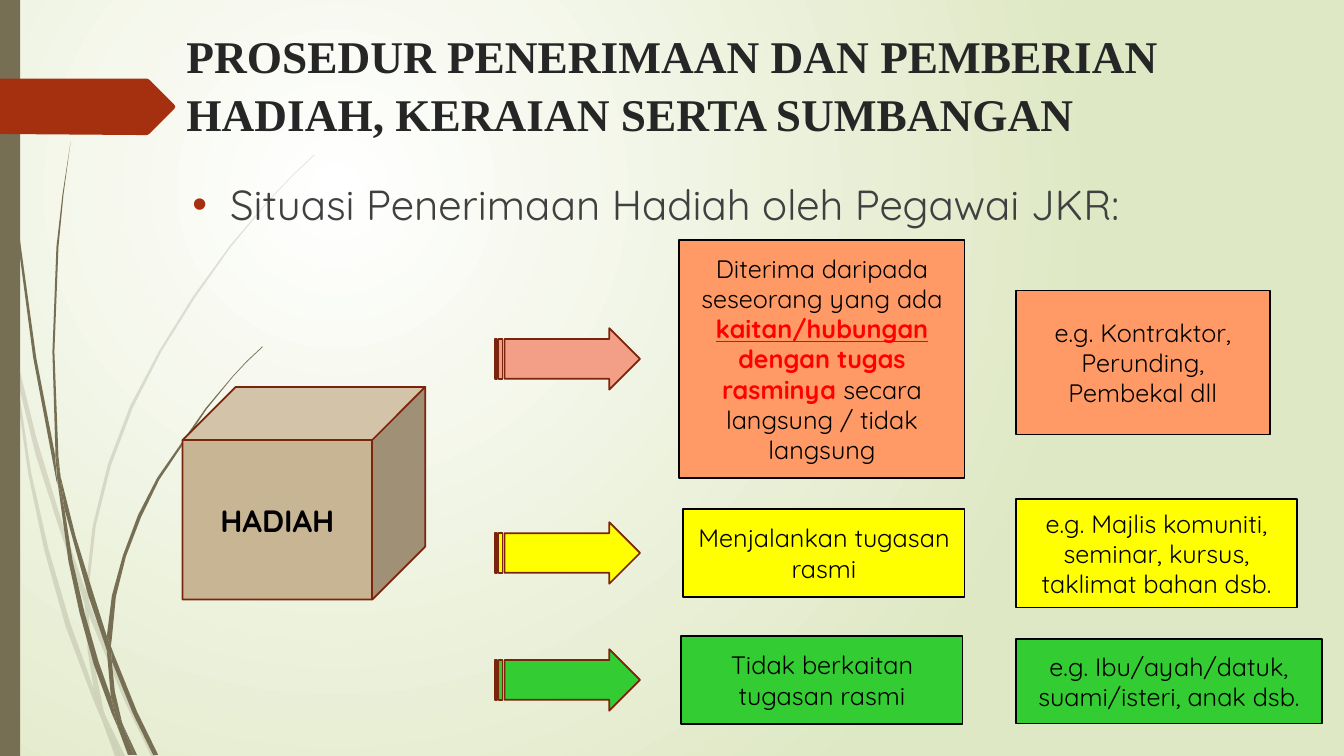
from lxml import etree
from pptx import Presentation
from pptx.dml.color import RGBColor
from pptx.enum.shapes import MSO_SHAPE
from pptx.enum.text import MSO_ANCHOR, PP_ALIGN
from pptx.oxml.ns import qn
from pptx.util import Cm, Pt

RECT = MSO_SHAPE.RECTANGLE
CUBE = MSO_SHAPE.CUBE
ARROW = MSO_SHAPE.STRIPED_RIGHT_ARROW
TOP, MIDDLE = MSO_ANCHOR.TOP, MSO_ANCHOR.MIDDLE
LEFT, CENTER, JUSTIFY = PP_ALIGN.LEFT, PP_ALIGN.CENTER, PP_ALIGN.JUSTIFY

WHITE = RGBColor(0xFF, 0xFF, 0xFF)
BLACK = RGBColor(0, 0, 0)
PALE = RGBColor(0xDF, 0xE8, 0xC4)
OLIVE = RGBColor(0x76, 0x6F, 0x54)
RUST = RGBColor(0xA5, 0x30, 0x10)
BROWN = RGBColor(0x7A, 0x24, 0x0C)
TAN = RGBColor(0xC8, 0xB5, 0x94)
DARK = RGBColor(0x26, 0x26, 0x26)
GREY = RGBColor(0x40, 0x40, 0x40)
RED = RGBColor(0xFF, 0, 0)
SALMON = RGBColor(0xF3, 0x9E, 0x87)
ORANGE = RGBColor(0xFF, 0x99, 0x66)
YELLOW = RGBColor(0xFF, 0xFF, 0)
GREEN = RGBColor(0x33, 0xCC, 0x33)

GRID = Cm(0.0254)  # unit of the outline points below

# Grass blades: faint ones behind, solid ones in front
FAINT = [
    [(11, 350), (9, 322), (0, 282), (0, 299), (10, 344)],
    [(58, 522), (84, 599), (85, 586), (62, 520), (36, 434), (14, 345),
     (17, 376), (35, 450)],
    [(92, 607), (88, 596), (88, 610), (123, 694), (150, 750), (155, 750),
     (127, 692)],
    [(119, 750), (124, 750), (105, 711)],
    [(93, 683), (70, 619), (48, 544), (31, 469), (17, 376), (11, 350),
     (28, 470), (44, 546), (65, 621), (92, 693), (101, 714), (99, 707)],
    [(84, 599), (87, 646), (93, 683), (96, 692), (105, 711), (103, 706),
     (91, 646), (88, 610), (88, 608)],
    [(88, 584), (95, 522), (110, 462), (132, 404), (160, 349), (193, 296),
     (229, 245), (268, 198), (290, 175), (312, 154), (312, 153), (289, 175),
     (268, 197), (228, 244), (191, 295), (158, 348), (129, 403), (107, 461),
     (92, 522), (85, 584), (85, 586), (88, 596)],
    [(101, 714), (114, 750), (119, 750)],
    [(88, 608), (88, 596), (85, 586), (84, 599)],
    [(96, 692), (93, 683), (99, 707), (101, 714), (119, 750), (105, 711)],
]
SOLID = [
    [(7, 110), (17, 233), (33, 355), (56, 477), (57, 481), (55, 457),
     (55, 453), (36, 355), (19, 232), (8, 109), (5, 48), (4, 0), (3, 0),
     (4, 48)],
    [(88, 592), (106, 645), (106, 631), (93, 590), (75, 532), (60, 472),
     (64, 505)],
    [(113, 649), (110, 641), (111, 656), (132, 708), (152, 749), (157, 749),
     (136, 706)],
    [(110, 691), (98, 657), (84, 608), (72, 556), (64, 505), (57, 477),
     (68, 557), (79, 608), (93, 659), (111, 708), (117, 722), (116, 717)],
    [(60, 472), (58, 453), (54, 349), (58, 245), (63, 193), (70, 141),
     (62, 193), (56, 245), (52, 349), (55, 449)],
    [(133, 749), (136, 749), (122, 719)],
    [(57, 477), (64, 505), (60, 472), (55, 449), (55, 453)],
    [(111, 633), (115, 592), (125, 552), (140, 513), (158, 476), (205, 406),
     (231, 374), (245, 359), (261, 344), (260, 344), (245, 358), (231, 373),
     (204, 405), (156, 474), (137, 511), (122, 551), (111, 591), (106, 631),
     (110, 641)],
    [(117, 722), (127, 749), (131, 749)],
    [(106, 645), (110, 691), (116, 706), (122, 719), (121, 716), (114, 686),
     (111, 656), (109, 651)],
    [(106, 645), (109, 651), (111, 656), (110, 641), (106, 631)],
    [(116, 706), (110, 691), (116, 717), (117, 722), (130, 749), (133, 749),
     (122, 719)],
]
TAG = [(173, 108), (148, 133), (146, 134), (136, 134), (0, 133), (0, 78),
       (146, 78), (148, 79), (173, 104), (174, 106)]

# Each row: arrow fill, box fill, case box, case runs, example box, example
ROWS = [
    (SALMON, ORANGE, (17.12, 6.05, 7.19, 5.99),
     [("Diterima daripada seseorang yang ada ", {}),
      ("kaitan/hubungan", {"color": RED, "bold": True, "line": True}),
      (" dengan tugas rasminya ", {"color": RED, "bold": True}),
      ("secara langsung / tidak langsung", {})],
     (25.6, 7.32, 6.4, 3.63), "e.g. Kontraktor, Perunding, Pembekal dll"),
    (YELLOW, YELLOW, (17.22, 12.83, 7.09, 2.21),
     [("Menjalankan tugasan rasmi", {})],
     (25.6, 12.57, 7.09, 2.74),
     "e.g. Majlis komuniti, seminar, kursus, taklimat bahan dsb."),
    (GREEN, GREEN, (17.17, 16.03, 7.09, 2.21),
     [("Tidak berkaitan tugasan rasmi", {})],
     (25.6, 16.1, 7.72, 2.13),
     "e.g. Ibu/ayah/datuk, suami/isteri, anak dsb."),
]


class Deck:
    font = "Quicksand"
    weight = Pt(1.25)

    def __init__(self, slide):
        self.slide = slide

    def backdrop(self, inner, outer):
        fill = self.slide.background.fill
        fill.gradient()
        for stop, color in zip(fill.gradient_stops, (inner, outer)):
            stop.color.rgb = color
        grad = self.slide.element.find(".//" + qn("a:gradFill"))
        grad.remove(grad.find(qn("a:lin")))
        circle = etree.SubElement(grad, qn("a:path"), {"path": "circle"})
        etree.SubElement(circle, qn("a:fillToRect"), l="50000", t="50000",
                         r="100000", b="100000")

    def paint(self, shape, fill, line=None):
        shape.shadow.inherit = False
        shape.fill.solid()
        shape.fill.fore_color.rgb = fill
        if line is None:
            shape.line.fill.background()
        else:
            shape.line.color.rgb = line
            shape.line.width = self.weight
        return shape

    def outline(self, home, points, fill, alpha=100):
        pen = home.build_freeform(*points[0], scale=GRID)
        pen.add_line_segments(points[1:], close=True)
        shape = self.paint(pen.convert_to_shape(), fill)
        if alpha < 100:
            tint = shape.element.spPr.find(".//" + qn("a:srgbClr"))
            etree.SubElement(tint, qn("a:alpha"), val=str(alpha * 1000))

    def grass(self, blades, alpha=100):
        group = self.slide.shapes.add_group_shape()
        for blade in blades:
            self.outline(group.shapes, blade, OLIVE, alpha)

    def shape(self, kind, box, fill, line=None):
        shape = self.slide.shapes.add_shape(kind, *map(Cm, box))
        return self.paint(shape, fill, line)

    def label(self, shape, runs, size, align=CENTER, anchor=MIDDLE,
              font=None, color=BLACK, bold=False):
        frame = shape.text_frame
        frame.word_wrap = True
        frame.vertical_anchor = anchor
        para = frame.paragraphs[0]
        para.alignment = align
        for text, look in runs:
            run = para.add_run()
            run.text = text
            run.font.name = font or self.font
            run.font.size = Pt(size)
            run.font.color.rgb = look.get("color", color)
            run.font.bold = look.get("bold", bold)
            run.font.underline = look.get("line", False)
        return para

    def text(self, box, words, size, **look):
        frame = self.slide.shapes.add_textbox(*map(Cm, box))
        return self.label(frame, [(words, {})], size, anchor=TOP, **look)

    def bullet(self, para, color):
        props = para._p.get_or_add_pPr()
        props.set("marL", str(Cm(0.95)))
        props.set("indent", str(-Cm(0.95)))
        tint = etree.SubElement(props, qn("a:buClr"))
        etree.SubElement(tint, qn("a:srgbClr"), val=str(color))
        etree.SubElement(props, qn("a:buFont"), typeface="Arial")
        etree.SubElement(props, qn("a:buChar"), char="•")


def main():
    prs = Presentation()
    prs.slide_width, prs.slide_height = Cm(33.87), Cm(19.05)
    slide = prs.slides.add_slide(prs.slide_layouts[6])
    deck = Deck(slide)

    # Decor
    deck.backdrop(WHITE, PALE)
    deck.grass(FAINT, 20)
    deck.grass(SOLID)
    deck.shape(RECT, (0, 0, 0.51, 19.05), OLIVE)
    deck.outline(slide.shapes, TAG, RUST)

    # Heading and lead line
    title = deck.text((4.45, 0.48, 28.07, 3.56),
                      "PROSEDUR PENERIMAAN DAN PEMBERIAN HADIAH, "
                      "KERAIAN SERTA SUMBANGAN", 32.4, align=LEFT,
                      font="Times New Roman", color=DARK, bold=True)
    title.line_spacing = 1.07
    lead = deck.text((4.6, 4.37, 26.37, 3.3),
                     "Situasi Penerimaan Hadiah oleh Pegawai JKR:", 30,
                     align=JUSTIFY, color=GREY)
    lead.space_before = Pt(10)
    deck.bullet(lead, RUST)

    # Gift cube
    cube = deck.shape(CUBE, (4.6, 9.75, 6.12, 5.36), TAN, BROWN)
    deck.label(cube, [("HADIAH", {})], 22, bold=True)

    # Cases: arrow centred on its box, then the example
    for tip, fill, case, runs, sample, words in ROWS:
        high = 1.55
        mid = case[1] + case[3] / 2
        arrow = deck.shape(ARROW, (12.47, mid - high / 2, 3.66, high),
                           tip, BROWN)
        arrow.adjustments[0] = 0.645
        arrow.adjustments[1] = 0.5
        deck.label(deck.shape(RECT, case, fill, BLACK), runs, 18)
        deck.label(deck.shape(RECT, sample, fill, BLACK), [(words, {})], 18)

    prs.save("out.pptx")


if __name__ == "__main__":
    main()
